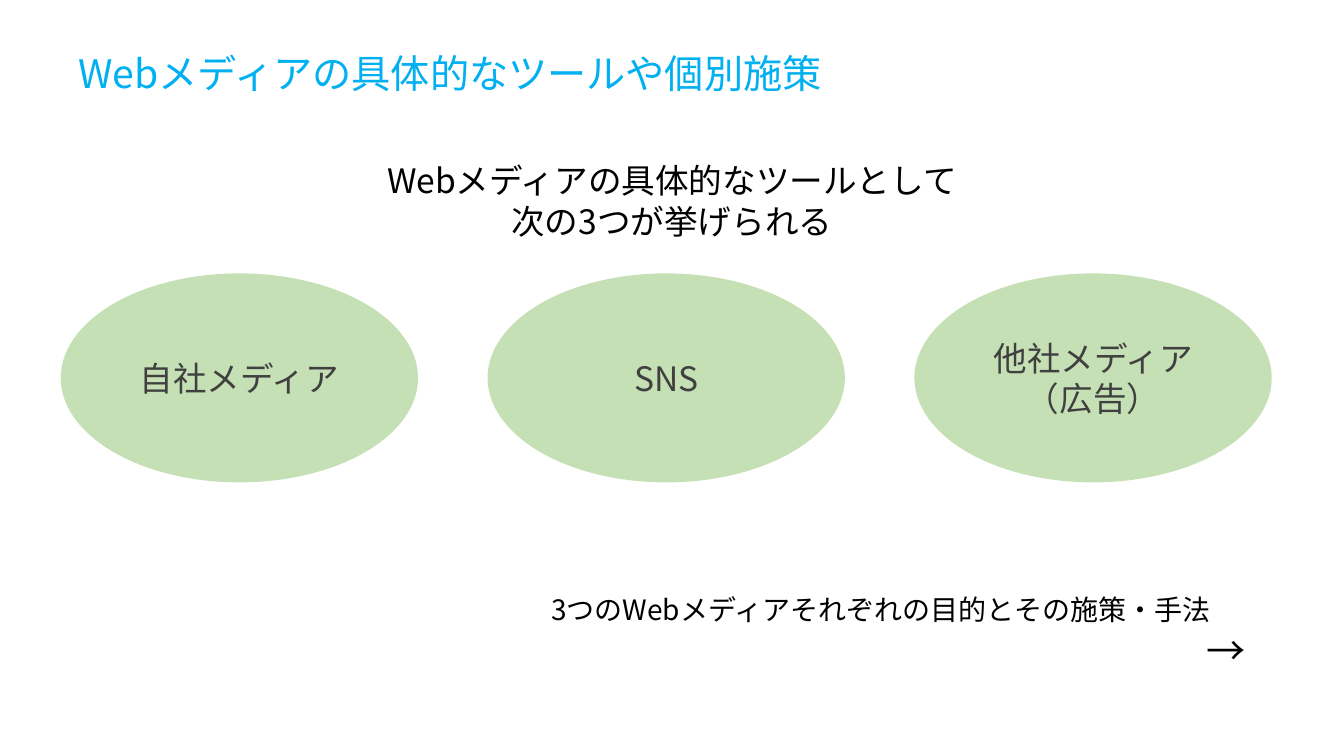
"""Slide on the three kinds of web media tools."""
from dataclasses import dataclass

import pptx
import pptx.dml.color
import pptx.enum.shapes
import pptx.enum.text
import pptx.oxml
import pptx.oxml.ns
import pptx.util

Pt = pptx.util.Pt
Align = pptx.enum.text.PP_ALIGN
Anchor = pptx.enum.text.MSO_ANCHOR


@dataclass(frozen=True)
class Theme:
    """Colours, font and type sizes."""
    font: str = "Noto Sans CJK JP"
    blue: str = "00B0F0"
    green: str = "C5E0B4"
    grey: str = "404040"
    black: str = "000000"
    title: int = 28
    body: int = 24
    note: int = 20


class Deck:
    """Holds the theme and the current slide."""

    def __init__(self, theme):
        """Start a wide deck with one blank slide."""
        self.theme = theme
        self.file = pptx.Presentation()
        self.file.slide_width, self.file.slide_height = Pt(960), Pt(540)
        self.slide = self.file.slides.add_slide(self.file.slide_layouts[6])

    def style(self, para, size, color, align):
        """Set the alignment and font of a paragraph."""
        para.alignment = align
        for run in para.runs:
            font = run.font
            font.size = Pt(size)
            font.name = self.theme.font
            font.color.rgb = pptx.dml.color.RGBColor.from_string(color)
            east = pptx.oxml.parse_xml(
                f'<a:ea {pptx.oxml.ns.nsdecls("a")} typeface="{self.theme.font}"/>')
            font._element.find(pptx.oxml.ns.qn("a:latin")).addnext(east)

    def text(self, box, words, size, color, align=Align.LEFT, wrap=False):
        """Add a text box and return its paragraphs."""
        frame = self.slide.shapes.add_textbox(*map(Pt, box)).text_frame
        frame.text = words
        frame.word_wrap = wrap
        for para in frame.paragraphs:
            self.style(para, size, color, align)
        return frame.paragraphs

    def oval(self, box, words):
        """Add a filled ellipse with centred text."""
        kind = pptx.enum.shapes.MSO_SHAPE.OVAL
        shape = self.slide.shapes.add_shape(kind, *map(Pt, box))
        shape.shadow.inherit = False
        green = pptx.dml.color.RGBColor.from_string(self.theme.green)
        shape.fill.solid()
        shape.fill.fore_color.rgb = green
        shape.line.color.rgb = green
        shape.line.width = Pt(1)
        frame = shape.text_frame
        frame.text = words
        frame.word_wrap = True
        frame.vertical_anchor = Anchor.MIDDLE
        self.style(frame.paragraphs[0], self.theme.body, self.theme.grey, Align.CENTER)


def main():
    """Build and save the slide."""
    theme = Theme()
    deck = Deck(theme)
    deck.text((49, 31.7, 553.7, 41), "Webメディアの具体的なツールや個別施策",
              theme.title, theme.blue)
    deck.text((265.7, 110.9, 428.4, 65.5),
              "Webメディアの具体的なツールとして\n次の3つが挙げられる",
              theme.body, theme.black, Align.CENTER)
    for col, media in enumerate(("自社メディア", "SNS", "他社メディア（広告）")):
        deck.oval((43.9 + col * 304.9, 195.8, 254.2, 148.3), media)
    note = deck.text((386.6, 419.8, 533.5, 65.5),
                     "3つのWebメディアそれぞれの目的とその施策・手法\n→",
                     theme.note, theme.black, wrap=True)
    arrow = note[1]
    arrow.runs[0].font.size = Pt(theme.title)
    arrow._p.get_or_add_pPr().set("marL", str(Pt(468)))
    deck.file.save("out.pptx")


if __name__ == "__main__":
    main()
